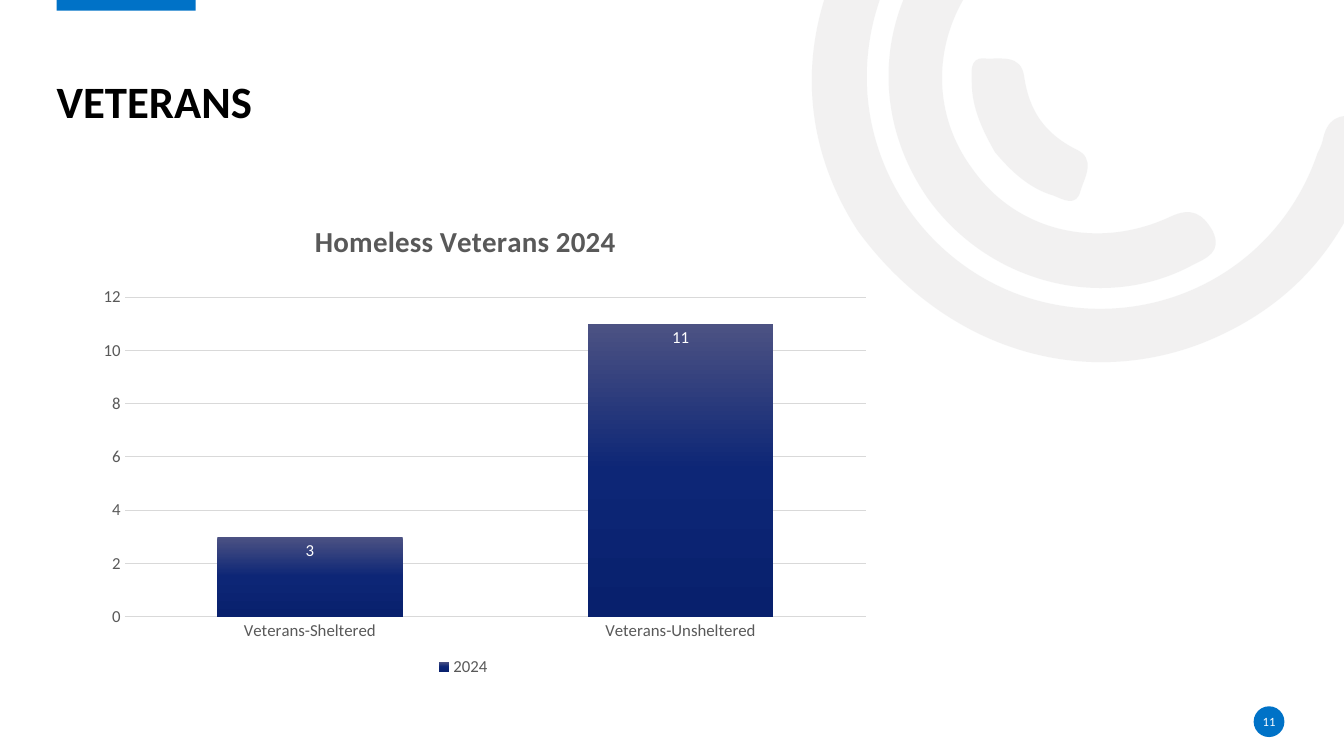
from copy import deepcopy
from math import cos, radians, sin

from lxml import etree
from pptx import Presentation
from pptx.chart.data import CategoryChartData
from pptx.dml.color import RGBColor
from pptx.enum.chart import XL_CHART_TYPE, XL_LABEL_POSITION, XL_LEGEND_POSITION, XL_TICK_MARK
from pptx.enum.shapes import MSO_SHAPE
from pptx.enum.text import MSO_ANCHOR, PP_ALIGN
from pptx.oxml import parse_xml
from pptx.oxml.ns import nsdecls, qn
from pptx.util import Pt


def paint(target, color):
    target.fill.solid()
    target.fill.fore_color.rgb = RGBColor.from_string(color)
    target.line.fill.background()
    target.shadow.inherit = False


def style_font(font, size, color, bold=False):
    font.name = "Calibri"
    font.size = Pt(size)
    font.bold = bold
    font.color.rgb = RGBColor.from_string(color)


presentation = Presentation()
presentation.slide_width = Pt(960)
presentation.slide_height = Pt(540)
slide = presentation.slides.add_slide(presentation.slide_layouts[6])
shapes = slide.shapes

ARC_ROTATION = 144.2
arcs = [
    ((8.13, -2.02, 4.85, 6), (8.51, 2.29), [
        (7.99, 1.49, 7.87, 0.5, 8.38, -0.5),
        (8.9, -1.52, 9.76, -2.03, 10.9, -2.07),
        (11.05, -2.07, 11.21, -2.1, 11.31, -1.95),
        (11.44, -1.75, 11.27, -1.54, 10.98, -1.54),
        (9.67, -1.54, 8.65, -0.59, 8.6, 0.68),
        (8.56, 1.81, 9.36, 2.81, 10.46, 3.02),
        (11.6, 3.24, 12.7, 2.61, 13.07, 1.52),
        (13.09, 1.48, 13.11, 1.44, 13.12, 1.4),
        (13.16, 1.19, 13.27, 1.11, 13.49, 1.17),
        (13.73, 1.24, 13.67, 1.41, 13.61, 1.56),
        (13.34, 2.45, 12.78, 3.07, 11.91, 3.41),
        (10.7, 3.87, 9.36, 3.45, 8.51, 2.29),
    ]),
    ((9.01, -0.78, 2.13, 4.26), (9.22, 1.99), [
        (8.62, 1.15, 8.69, 0.07, 9.4, -0.68),
        (9.51, -0.79, 9.62, -0.95, 9.8, -0.78),
        (9.95, -0.64, 9.97, -0.5, 9.79, -0.32),
        (9.25, 0.26, 9.2, 1.08, 9.65, 1.68),
        (10.08, 2.29, 10.88, 2.49, 11.61, 2.15),
        (11.82, 2.05, 11.93, 2.12, 12.03, 2.29),
        (12.13, 2.5, 11.97, 2.56, 11.83, 2.63),
        (10.96, 3.1, 9.83, 2.82, 9.22, 1.99),
    ]),
    ((9.8, 0.37, 0.78, 1.83), (9.87, 1.51), [
        (9.75, 1.3, 9.64, 1.07, 9.64, 0.82),
        (9.64, 0.73, 9.61, 0.57, 9.76, 0.58),
        (9.92, 0.59, 10.13, 0.53, 10.16, 0.76),
        (10.21, 1.1, 10.36, 1.32, 10.67, 1.48),
        (10.88, 1.57, 10.76, 1.76, 10.72, 1.89),
        (10.68, 2.06, 10.55, 1.98, 10.45, 1.94),
        (10.21, 1.87, 10.03, 1.7, 9.87, 1.51),
    ]),
]
turn_cos, turn_sin = cos(radians(ARC_ROTATION)), sin(radians(ARC_ROTATION))
for box, start, curves in arcs:
    left, top, width, height = (Pt(72 * length) for length in box)
    coordinates = [*start, *(value for curve in curves for value in curve)]
    points = []
    for x, y in zip(coordinates[::2], coordinates[1::2]):
        dx = Pt(72 * x) - left - width / 2
        dy = Pt(72 * y) - top - height / 2
        points.append((
            round(width / 2 + dx * turn_cos + dy * turn_sin),
            round(height / 2 - dx * turn_sin + dy * turn_cos),
        ))
    builder = shapes.build_freeform(*points[0])
    builder.add_line_segments(points[3::3], close=True)
    arc = builder.convert_to_shape()
    arc.left, arc.top, arc.width, arc.height = left, top, width, height
    arc.rotation = ARC_ROTATION
    paint(arc, "E7E6E6")
    fill_color = arc.fill._xPr.find(qn("a:solidFill"))[0]
    etree.SubElement(fill_color, qn("a:alpha"), val="53000")

    outline = arc._element.find(".//" + qn("a:pathLst"))[0]
    outline.set("w", str(width))
    outline.set("h", str(height))
    move, *segments, close = outline
    move[0].set("x", str(points[0][0]))
    move[0].set("y", str(points[0][1]))
    for index, segment in enumerate(segments):
        curve = etree.Element(qn("a:cubicBezTo"))
        for x, y in points[3 * index + 1:3 * index + 4]:
            etree.SubElement(curve, qn("a:pt"), x=str(x), y=str(y))
        outline.replace(segment, curve)

accent_bar = shapes.add_shape(MSO_SHAPE.RECTANGLE, Pt(40.5), Pt(-1.5), Pt(99.3), Pt(9))
accent_bar.rotation = 180
number_badge = shapes.add_shape(MSO_SHAPE.OVAL, Pt(895.5), Pt(504.5), Pt(22), Pt(22))
for shape in (accent_bar, number_badge):
    paint(shape, "0072C7")

labels = [
    ("11", (895, 508.5, 23, 14.4), 9, "FFFFFF", False, PP_ALIGN.CENTER, MSO_ANCHOR.MIDDLE, 1),
    ("VETERANS", (40.5, 19, 878, 72.5), 32, "000000", True, PP_ALIGN.LEFT, MSO_ANCHOR.BOTTOM, 0.9),
]
for text, box, size, color, bold, alignment, anchor, spacing in labels:
    frame = shapes.add_textbox(*map(Pt, box)).text_frame
    frame.word_wrap = True
    frame.vertical_anchor = anchor
    frame.margin_left = frame.margin_right = frame.margin_top = frame.margin_bottom = 0
    paragraph = frame.paragraphs[0]
    paragraph.alignment = alignment
    paragraph.line_spacing = spacing
    run = paragraph.add_run()
    run.text = text
    style_font(run.font, size, color, bold)

chart_data = CategoryChartData()
chart_data.categories = ["Veterans-Sheltered", "Veterans-Unsheltered"]
chart_data.add_series("2024", [3, 11])
chart = shapes.add_chart(
    XL_CHART_TYPE.COLUMN_CLUSTERED, Pt(42.3), Pt(143.8), Pt(577.4), Pt(342.6), chart_data
).chart
style_font(chart.font, 12, "595959")

chart.has_title = True
title_run = chart.chart_title.text_frame.paragraphs[0].add_run()
title_run.text = "Homeless Veterans 2024"
style_font(title_run.font, 20.7, "595959", True)

chart.has_legend = True
chart.legend.position = XL_LEGEND_POSITION.BOTTOM
chart.legend.include_in_layout = False
style_font(chart.legend.font, 12, "595959")

for axis in (chart.category_axis, chart.value_axis):
    axis.major_tick_mark = axis.minor_tick_mark = XL_TICK_MARK.NONE
    style_font(axis.tick_labels.font, 12, "595959")
value_axis = chart.value_axis
value_axis.minimum_scale, value_axis.maximum_scale, value_axis.major_unit = 0, 12, 2
value_axis.format.line.fill.background()
for line in (chart.category_axis.format.line, value_axis.major_gridlines.format.line):
    line.width = Pt(0.75)
    line.color.rgb = RGBColor.from_string("D9D9D9")

plot = chart.plots[0]
plot.gap_width = 100
plot.overlap = -24
plot.vary_by_categories = False
series = plot.series[0]
bar_fill = series.format.fill
bar_fill.gradient()
bar_fill.gradient_angle = 270
stop_list = series._element.find(".//" + qn("a:gsLst"))
stop_list.insert(1, deepcopy(stop_list[0]))
gradient = [(0, "4C5283"), (0.5, "0D2676"), (1, "08206D")]
for stop, (position, color) in zip(bar_fill.gradient_stops, gradient):
    stop.position = position
    stop.color.rgb = RGBColor.from_string(color)
data_labels = series.data_labels
data_labels.show_value = True
data_labels.position = XL_LABEL_POSITION.INSIDE_END
style_font(data_labels.font, 12, "FFFFFF")

layouts = [
    ("c:title", {"xMode": "edge", "yMode": "edge", "x": 0.31, "y": 0.03}),
    ("c:plotArea", {"layoutTarget": "inner", "xMode": "edge", "yMode": "edge",
                    "x": 0.081, "y": 0.2, "w": 0.917, "h": 0.666}),
]
for tag, settings in layouts:
    parent = chart._chartSpace.find(".//" + qn(tag))
    for old_layout in parent.findall(qn("c:layout")):
        parent.remove(old_layout)
    entries = "".join(f'<c:{name} val="{value}"/>' for name, value in settings.items())
    layout = parse_xml(
        f'<c:layout {nsdecls("c")}><c:manualLayout>{entries}</c:manualLayout></c:layout>'
    )
    parent.insert(1 if tag == "c:title" else 0, layout)

presentation.save("out.pptx")
